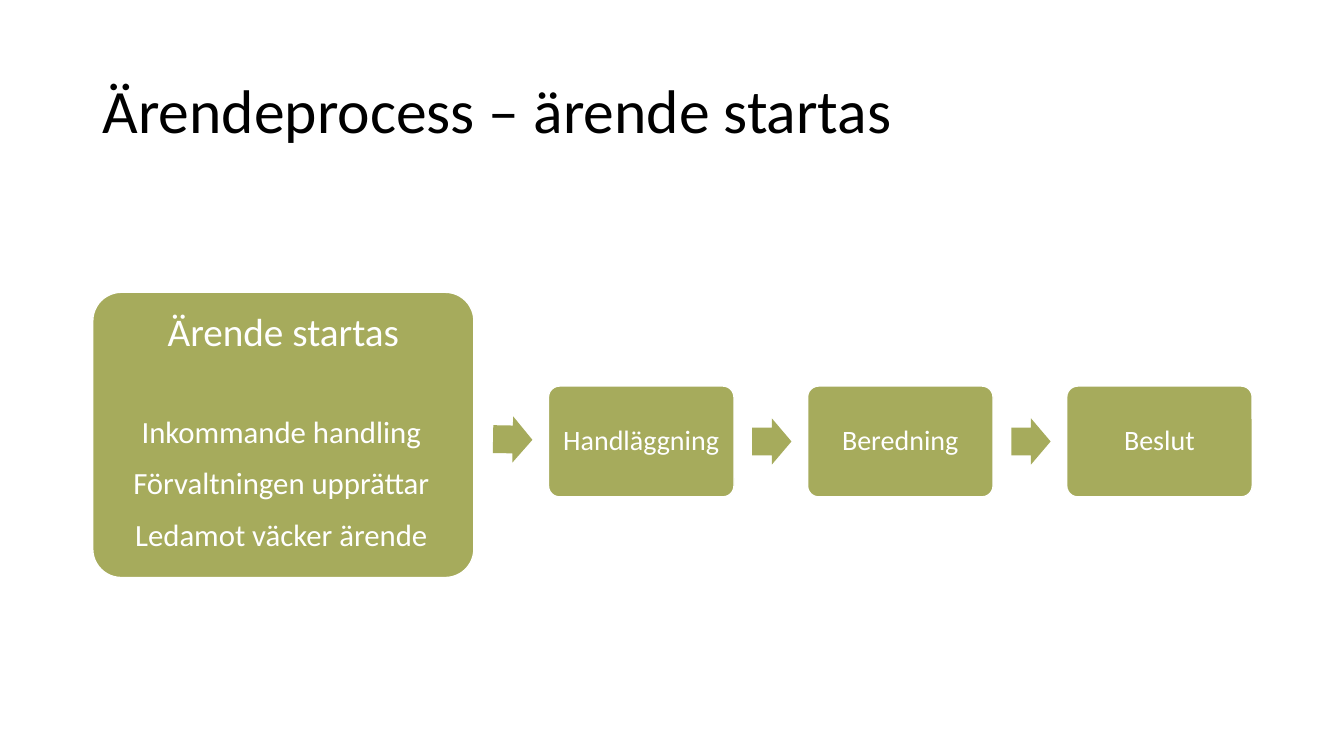
from dataclasses import dataclass

from pptx import Presentation
from pptx.dml.color import RGBColor
from pptx.enum.shapes import MSO_SHAPE
from pptx.enum.text import MSO_ANCHOR, PP_ALIGN
from pptx.shapes.autoshape import Shape
from pptx.slide import Slide
from pptx.util import Inches, Pt

ROUND = MSO_SHAPE.ROUNDED_RECTANGLE
ARROW = MSO_SHAPE.RIGHT_ARROW
TOP = MSO_ANCHOR.TOP
MIDDLE = MSO_ANCHOR.MIDDLE
LEFT = PP_ALIGN.LEFT
CENTER = PP_ALIGN.CENTER

OLIVE = RGBColor(0xA6, 0xAB, 0x5C)
WHITE = RGBColor(0xFF, 0xFF, 0xFF)
BLACK = RGBColor(0x00, 0x00, 0x00)
FONT = "Calibri"

STEPS = ("Handläggning", "Beredning", "Beslut")
STARTS = ("Inkommande handling", "Förvaltningen upprättar", "Ledamot väcker ärende")
STEP_LEFT = 5.44
STEP_PITCH = 2.57
ARROW_BACK = 0.55
START_TOP = 4.02
START_HEIGHT = 0.51


@dataclass(frozen=True)
class Box:
    left: float
    top: float
    width: float
    height: float
    text: str
    size: int
    inset: float
    anchor: MSO_ANCHOR = MIDDLE
    spacing: float = 0.9
    filled: bool = True


def set_text(shape: Shape, text: str, size: int, color: RGBColor,
             align: PP_ALIGN, anchor: MSO_ANCHOR, spacing: float) -> None:
    frame = shape.text_frame
    frame.word_wrap = True
    frame.vertical_anchor = anchor
    line = frame.paragraphs[0]
    line.text = text
    line.alignment = align
    line.line_spacing = spacing
    line.font.name = FONT
    line.font.size = Pt(size)
    line.font.color.rgb = color


def add_title(slide: Slide, text: str) -> None:
    title = slide.shapes.add_textbox(Inches(0.92), Inches(0.4), Inches(11.5), Inches(1.45))
    set_text(title, text, 44, BLACK, LEFT, MIDDLE, 0.9)


def add_box(slide: Slide, box: Box) -> None:
    shape = slide.shapes.add_shape(
        ROUND, Inches(box.left), Inches(box.top), Inches(box.width), Inches(box.height))
    shape.shadow.inherit = False
    shape.adjustments[0] = 0.1
    if box.filled:
        shape.fill.solid()
        shape.fill.fore_color.rgb = OLIVE
        shape.line.color.rgb = WHITE
        shape.line.width = Pt(1)
    else:
        shape.fill.background()
        shape.line.fill.background()
    frame = shape.text_frame
    frame.margin_left = frame.margin_right = Inches(box.inset)
    frame.margin_top = frame.margin_bottom = Inches(box.inset)
    set_text(shape, box.text, box.size, WHITE, CENTER, box.anchor, box.spacing)


def add_arrow(slide: Slide, left: float, top: float, turn: float) -> None:
    arrow = slide.shapes.add_shape(
        ARROW, Inches(left), Inches(top), Inches(0.39), Inches(0.46))
    arrow.shadow.inherit = False
    arrow.adjustments[0] = 0.6
    arrow.adjustments[1] = 0.5
    arrow.rotation = turn
    arrow.fill.solid()
    arrow.fill.fore_color.rgb = OLIVE
    arrow.line.fill.background()


def main() -> None:
    deck = Presentation()
    deck.slide_width = Inches(13.33)
    deck.slide_height = Inches(7.5)
    slide = deck.slides.add_slide(deck.slide_layouts[6])

    add_title(slide, "Ärendeprocess – ärende startas")
    add_box(slide, Box(0.92, 2.9, 3.78, 2.83, "Ärende startas", 28, 0.12, TOP))
    for index, step in enumerate(STEPS):
        left = STEP_LEFT + index * STEP_PITCH
        first = index == 0
        add_arrow(slide, left - ARROW_BACK, 4.13 if first else 4.15, 1 if first else 0)
        add_box(slide, Box(left, 3.83, 1.84, 1.1, step, 20, 0.08))
    for index, start in enumerate(STARTS):
        top = START_TOP + index * START_HEIGHT
        add_box(slide, Box(0.92, top, 3.74, START_HEIGHT, start, 22, 0.05,
                           spacing=1.0, filled=False))

    deck.save("out.pptx")


if __name__ == "__main__":
    main()
